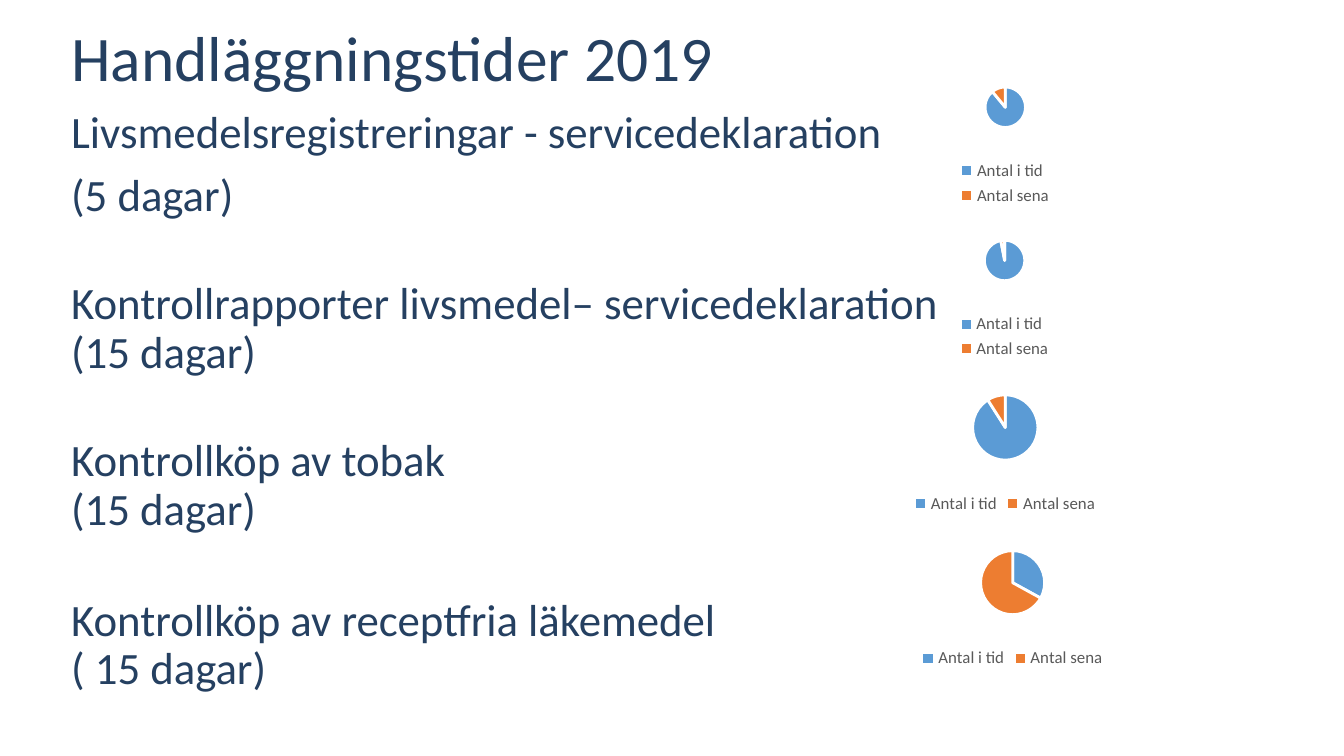
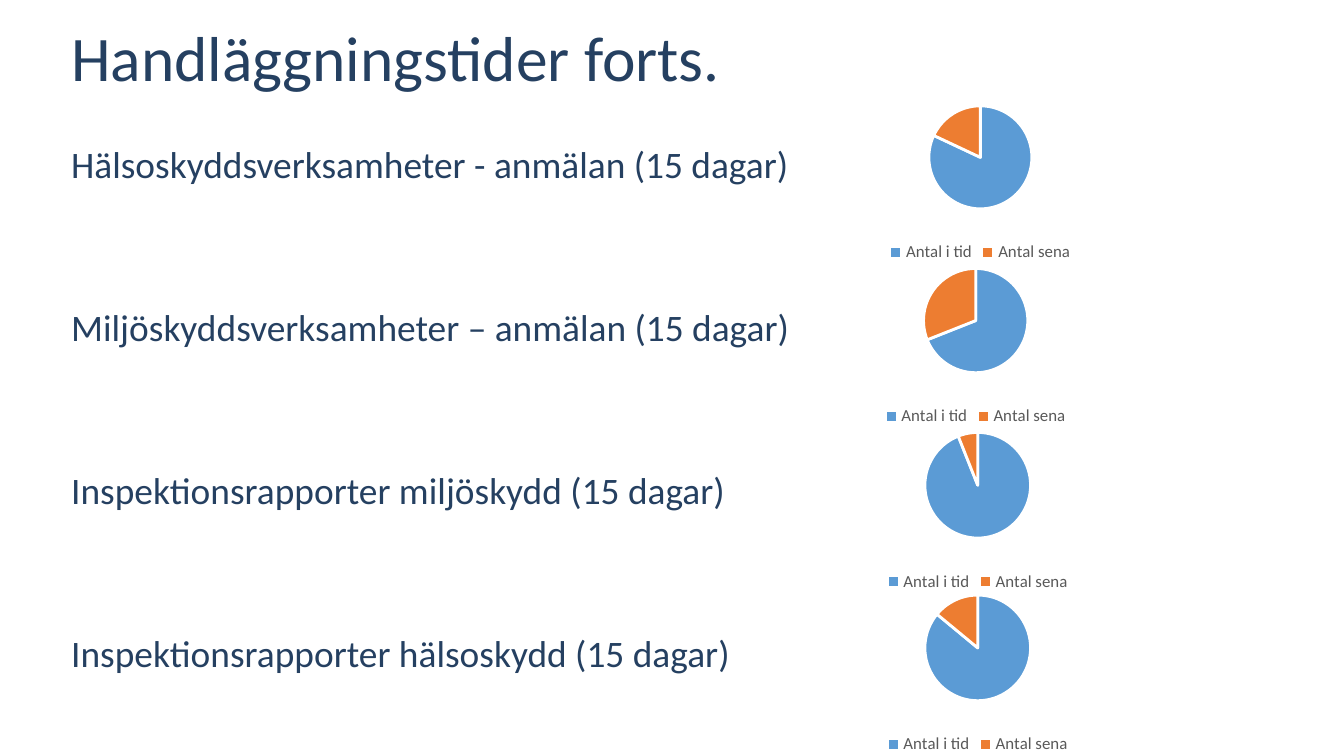
from pptx import Presentation
from pptx.chart.data import CategoryChartData
from pptx.dml.color import RGBColor
from pptx.enum.chart import XL_CHART_TYPE as ChartType, XL_LEGEND_POSITION as LegendPosition
from pptx.enum.text import MSO_ANCHOR as Anchor, MSO_AUTO_SIZE as AutoSize, PP_ALIGN as Align
from pptx.util import Inches, Pt

FONT = "Calibri"
NAVY, GREY, BLACK, WHITE = "254061", "595959", "000000", "FFFFFF"
OUTCOMES = {"Antal i tid": "5B9BD5", "Antal sena": "ED7D31"}
LEFT = 0.53
TITLE_BOX = (LEFT, 0.2, 9.13, 0.67)

SLIDES = [
    {
        "title": "Handläggningstider 2019",
        "box": (LEFT, 0.82, 8.6, 3.73),
        "size": 24,
        "services": [
            ("Livsmedelsregistreringar - servicedeklaration", 0),
            ("(5 dagar)", 7.5),
            ("Kontrollrapporter livsmedel– servicedeklaration\v(15 dagar)", 32.3),
            ("Kontrollköp av tobak\v(15 dagar)", 32.3),
            ("Kontrollköp av receptfria läkemedel\v( 15 dagar)", 33.5),
        ],
        "pies": [
            ((6.72, 0.51, 1.52, 1.06), (89, 11)),
            ((6.71, 1.65, 1.53, 1.06), (97, 3)),
            ((6.54, 2.8, 1.88, 1.06), (91, 9)),
            ((6.71, 3.96, 1.65, 1.05), (33, 67)),
        ],
    },
    {
        "title": "Handläggningstider forts.",
        "box": (LEFT, 1.09, 9.13, 4.42),
        "size": 20,
        "services": [
            ("Hälsoskyddsverksamheter - anmälan (15 dagar)", 0),
            ("Miljöskyddsverksamheter – anmälan (15 dagar)", 65.7),
            ("Inspektionsrapporter miljöskydd (15 dagar)", 65.7),
            ("Inspektionsrapporter hälsoskydd (15 dagar)", 65.7),
        ],
        "pies": [
            ((6.18, 0.65, 2.23, 1.34), (82, 18)),
            ((6.01, 1.86, 2.5, 1.35), (69, 31)),
            ((6.09, 3.08, 2.37, 1.36), (94, 6)),
            ((6.14, 4.29, 2.27, 1.36), (86, 14)),
        ],
    },
]


def color(value):
    """Turn a hex string into a colour."""
    return RGBColor.from_string(value)


def style_font(font, size, value):
    """Set the shared typeface with a size and colour."""
    font.name = FONT
    font.size = Pt(size)
    font.color.rgb = color(value)


def write(frame, paragraphs, size):
    """Fill a text frame with (text, space before) paragraphs."""
    frame.word_wrap = True
    frame.auto_size = AutoSize.NONE
    frame.vertical_anchor = Anchor.TOP
    frame.margin_left = frame.margin_top = frame.margin_right = frame.margin_bottom = 0
    for index, (text, gap) in enumerate(paragraphs):
        paragraph = frame.add_paragraph() if index else frame.paragraphs[0]
        paragraph.text = text
        paragraph.alignment = Align.LEFT
        paragraph.line_spacing = 0.9
        paragraph.space_before = Pt(gap)
        for run in paragraph.runs:
            style_font(run.font, size, NAVY)


def add_title(slide, text, box):
    """Place the slide title in its box."""
    title = slide.shapes.title
    title.left, title.top, title.width, title.height = map(Inches, box)
    write(title.text_frame, [(text, 0)], 34)


def add_services(slide, services, size, box):
    """List the services and their time limits in a box."""
    listing = slide.shapes.add_textbox(*map(Inches, box))
    write(listing.text_frame, services, size)


def add_pie(slide, shares, box):
    """Draw the on-time and late shares as a pie in a box."""
    data = CategoryChartData()
    data.categories = list(OUTCOMES)
    data.add_series("Series 1", shares)
    chart = slide.shapes.add_chart(ChartType.PIE, *map(Inches, box), data).chart
    style_font(chart.font, 10, BLACK)
    chart.has_title = False
    chart.has_legend = True
    chart.legend.position = LegendPosition.BOTTOM
    chart.legend.include_in_layout = False
    style_font(chart.legend.font, 9, GREY)
    plot = chart.plots[0]
    plot.vary_by_categories = True
    for index, value in enumerate(OUTCOMES.values()):
        wedge = plot.series[0].points[index].format
        wedge.fill.solid()
        wedge.fill.fore_color.rgb = color(value)
        wedge.line.color.rgb = color(WHITE)
        wedge.line.width = Pt(1.5)


def add_times_slide(deck, content):
    """Build one slide of handling times with a pie for each service."""
    slide = deck.slides.add_slide(deck.slide_layouts[5])
    add_title(slide, content["title"], TITLE_BOX)
    add_services(slide, content["services"], content["size"], content["box"])
    for box, shares in content["pies"]:
        add_pie(slide, shares, box)


def main():
    """Build and save the widescreen deck."""
    deck = Presentation()
    deck.slide_width = Inches(10)
    deck.slide_height = deck.slide_width * 9 // 16
    for content in SLIDES:
        add_times_slide(deck, content)
    deck.save("out.pptx")


if __name__ == "__main__":
    main()
